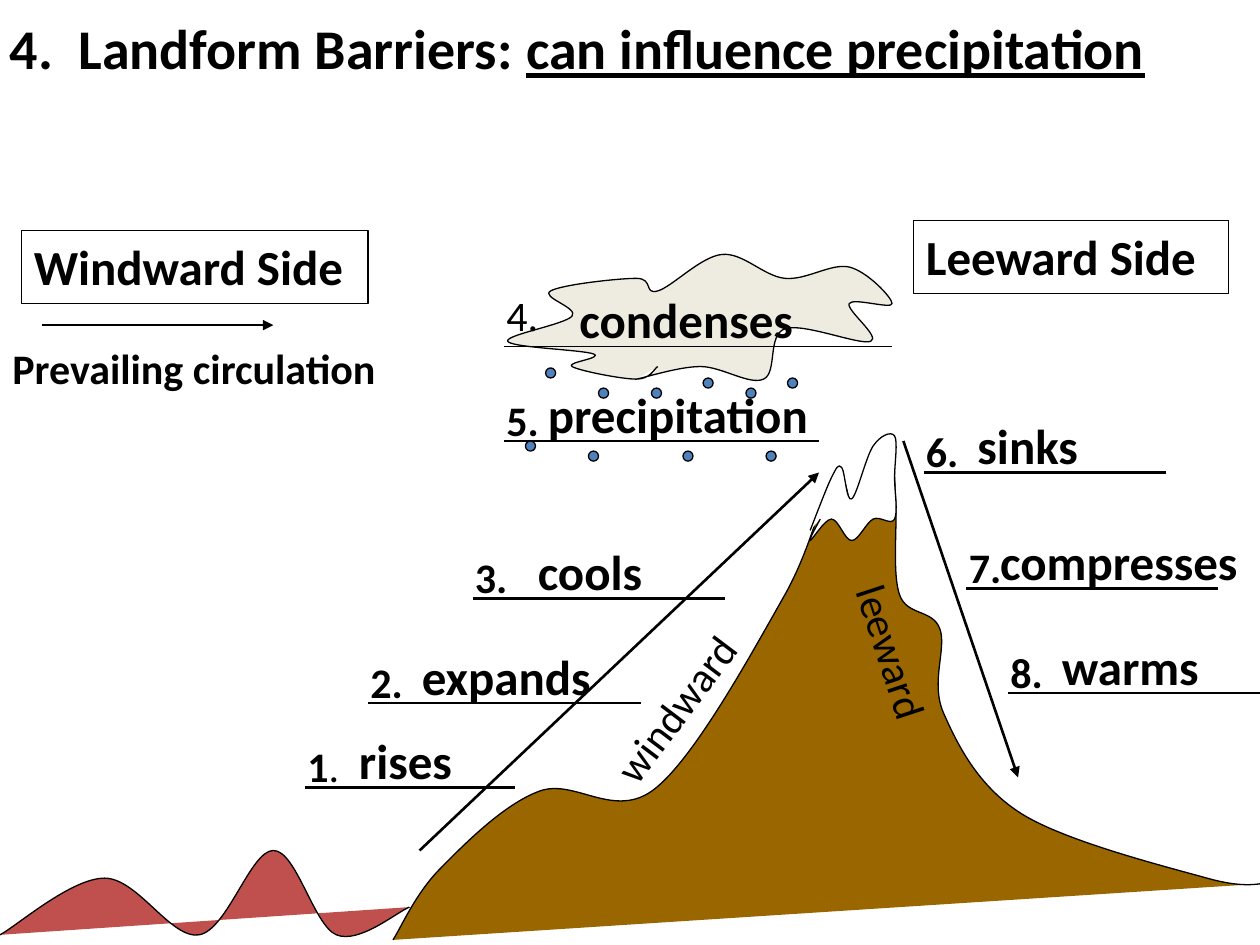
"""Build the slide on how landform barriers influence precipitation."""
from collections import namedtuple
from math import cos, radians, sin

from lxml.etree import SubElement
from pptx import Presentation
from pptx.dml.color import RGBColor
from pptx.enum.shapes import MSO_CONNECTOR, MSO_SHAPE
from pptx.enum.text import MSO_ANCHOR, PP_ALIGN
from pptx.oxml.ns import qn
from pptx.util import Cm, Pt

COLORS = {"ink": "000000", "hills": "C0504D", "mountain": "996600",
          "snow": "FFFFFF", "cloud": "EEECE1", "rain": "4F81BD"}
CM_PER_INCH = 2.54
TITLE_SIZE, WORD_SIZE, NOTE_SIZE = 32, 28, 24
NUMBER_WIDTH, NUMBER_HEIGHT, WORD_HEIGHT = 0.58, 0.5, 0.57
DROP_SIZE = 0.08
PLAIN, BOLD, UNDERLINED = (False, False), (True, False), (True, True)

Landform = namedtuple("Landform", "fill tilt knots")
Step = namedtuple("Step", "left base length weight word indent word_width")
Rule = namedtuple("Rule", "left top right bottom weight arrow")
Label = namedtuple("Label", "left top width height size spans turn framed",
                   defaults=(0, False))


def lengths(*inches):
    return [Cm(CM_PER_INCH * value) for value in inches]


def paint(shape, fill):
    shape.shadow.inherit = False
    if fill:
        shape.fill.solid()
        shape.fill.fore_color.rgb = RGBColor.from_string(COLORS[fill])
    else:
        shape.fill.background()
    shape.line.color.rgb = RGBColor.from_string(COLORS["ink"])
    shape.line.width = Pt(0.75)


deck = Presentation()
deck.slide_width, deck.slide_height = Cm(25.4), Cm(19.05)
page = deck.slides.add_slide(deck.slide_layouts[6])

landforms = [
    Landform("hills", 0, [
        (0, 7.42), (0.83, 6.97), (1.58, 7.42), (2.17, 6.75), (2.67, 7.42), (3.25, 7.2)]),
    Landform("mountain", 3.8, [
        (3.12, 7.46), (3.49, 6.9), (4.28, 6.28), (5.2, 6.26), (6.22, 4.74), (6.62, 3.77),
        (6.77, 4.03), (6.87, 3.78), (7.06, 3.46), (7.11, 3.97), (7.14, 4.72), (7.46, 4.99),
        (7.49, 5.66), (8.11, 6.46), (9.58, 6.97), (10.08, 7.01)]),
    Landform("snow", 0, [
        (6.43, 4.21), (6.6, 3.79), (6.68, 3.71), (6.76, 3.96), (6.93, 3.54), (7.1, 3.46),
        (7.1, 3.79), (7.1, 4.12), (6.93, 4.12), (6.76, 4.29), (6.6, 4.12), (6.43, 4.29),
        (6.51, 4.12)]),
    Landform("cloud", 0, [
        (5.22, 2.91), (5.05, 3.01), (4.54, 2.91), (4.71, 2.81), (4.03, 2.71), (4.54, 2.51),
        (4.37, 2.31), (5.05, 2.21), (5.22, 2.31), (5.73, 2.02), (6.23, 2.21), (6.74, 2.12),
        (7.08, 2.41), (6.74, 2.41), (6.91, 2.71), (6.23, 2.61), (6.06, 3.01), (5.56, 2.91),
        (5.05, 3.01)])]

pivot_x, pivot_y = 6.71, 5.56
for landform in landforms:
    cosine, sine = cos(radians(landform.tilt)), sin(radians(landform.tilt))
    knots = [(pivot_x + (x - pivot_x) * cosine + (y - pivot_y) * sine,
              pivot_y - (x - pivot_x) * sine + (y - pivot_y) * cosine)
             for x, y in landform.knots]
    padded = [knots[0], *knots, knots[-1]]
    slopes = [((after[0] - before[0]) / 6, (after[1] - before[1]) / 6)
              for before, after in zip(padded, padded[2:])]
    handles = []
    for index in range(len(knots) - 1):
        (x1, y1), (x2, y2) = knots[index:index + 2]
        (dx1, dy1), (dx2, dy2) = slopes[index:index + 2]
        handles += [(x1 + dx1, y1 + dy1), (x2 - dx2, y2 - dy2), (x2, y2)]

    builder = page.shapes.build_freeform(*lengths(*knots[0]))
    builder.add_line_segments([lengths(*point) for point in handles], close=False)
    shape = builder.convert_to_shape()
    shape.rotation = landform.tilt
    paint(shape, landform.fill)
    outline = next(shape._element.iter(qn("a:path")))
    segments = outline.findall(qn("a:lnTo"))
    for start in range(0, len(segments), 3):
        curve = SubElement(outline, qn("a:cubicBezTo"))
        for segment in segments[start:start + 3]:
            curve.append(segment[0])
            outline.remove(segment)

steps = [
    Step(2.42, 6.25, 1.67, 2.25, "rises", 0.33, 1.58),
    Step(2.92, 5.58, 2.17, 1.5, "expands", 0.33, 2),
    Step(3.75, 4.75, 2, 1.5, "cools", 0.42, 1.67),
    Step(4, 2.75, 3.08, 0.75, "condenses", 0.5, 2.75),
    Step(4, 3.5, 2.5, 1.5, "precipitation", 0.25, 2.33),
    Step(7.33, 3.75, 1.92, 1.5, "sinks", 0.33, 2),
    Step(7.67, 4.67, 2, 1.5, "compresses", 0.17, 2.17),
    Step(8, 5.5, 2, 1.5, "warms", 0.33, 1.67)]

rules = [
    Rule(3.33, 6.75, 6.5, 3.75, 1.5, True),
    Rule(7.17, 3.5, 8.08, 6.17, 1.5, True),
    Rule(0.33, 2.58, 2.17, 2.58, 1.5, True)]
labels = [
    Label(-0.02, -0.25, 10, 1.25, TITLE_SIZE, [("4.  Landform Barriers: ", BOLD),
                                               ("can influence precipitation", UNDERLINED)]),
    Label(0.17, 1.83, 2.75, 0.58, WORD_SIZE, [("Windward Side", BOLD)], framed=True),
    Label(7.25, 1.75, 2.5, 0.58, WORD_SIZE, [("Leeward Side", BOLD)], framed=True),
    Label(0, 2.67, 3.75, 0.5, NOTE_SIZE, [("Prevailing circulation", BOLD)]),
    Label(4.38, 4.96, 2.58, 0.5, NOTE_SIZE, [("windward", PLAIN)], turn=307.1),
    Label(6.08, 5.42, 2.33, 0.5, NOTE_SIZE, [("leeward", PLAIN)], turn=71.8)]

number_styles = {1: (BOLD, PLAIN), 4: (PLAIN, PLAIN)}
for number, step in enumerate(steps, start=1):
    rules.append(Rule(step.left, step.base, step.left + step.length, step.base,
                      step.weight, False))
    digit_style, dot_style = number_styles.get(number, (BOLD, BOLD))
    if digit_style == dot_style:
        number_spans = [(f"{number}.", digit_style)]
    else:
        number_spans = [(str(number), digit_style), (".", dot_style)]
    lift = 0.5 if step.word == "condenses" else 0.42
    labels += [
        Label(step.left - 0.08, step.base - lift, NUMBER_WIDTH, NUMBER_HEIGHT,
              NOTE_SIZE, number_spans),
        Label(step.left + step.indent, step.base - 0.5, step.word_width, WORD_HEIGHT,
              WORD_SIZE, [(step.word, BOLD)])]

for rule in rules:
    ends = lengths(rule.left, rule.top, rule.right, rule.bottom)
    connector = page.shapes.add_connector(MSO_CONNECTOR.STRAIGHT, *ends)
    connector.line.color.rgb = RGBColor.from_string(COLORS["ink"])
    connector.line.width = Pt(rule.weight)
    properties = connector._element.spPr
    if rule.arrow:
        SubElement(properties.find(qn("a:ln")), qn("a:tailEnd"), type="triangle")
    SubElement(properties, qn("a:effectLst"))

for label in labels:
    place = lengths(label.left, label.top, label.width, label.height)
    if label.framed:
        box = page.shapes.add_shape(MSO_SHAPE.RECTANGLE, *place)
        paint(box, None)
    else:
        box = page.shapes.add_textbox(*place)
    box.rotation = label.turn
    frame = box.text_frame
    frame.word_wrap = True
    frame.vertical_anchor = MSO_ANCHOR.MIDDLE if label.size == TITLE_SIZE else MSO_ANCHOR.TOP
    para = frame.paragraphs[0]
    para.alignment = PP_ALIGN.LEFT
    for text, (is_bold, is_underlined) in label.spans:
        span = para.add_run()
        span.text = text
        span.font.name = "Calibri"
        span.font.size = Pt(label.size)
        span.font.bold = is_bold
        span.font.underline = is_underlined
        span.font.color.rgb = RGBColor.from_string(COLORS["ink"])

rain_rows = {2.92: [4.33], 3: [5.58, 6.25], 3.08: [4.75, 5.17, 5.92],
             3.5: [4.17], 3.58: [4.67, 5.42, 6.08]}
for top, lefts in rain_rows.items():
    for left in lefts:
        place = lengths(left, top, DROP_SIZE, DROP_SIZE)
        paint(page.shapes.add_shape(MSO_SHAPE.FLOWCHART_CONNECTOR, *place), "rain")

deck.save("out.pptx")
